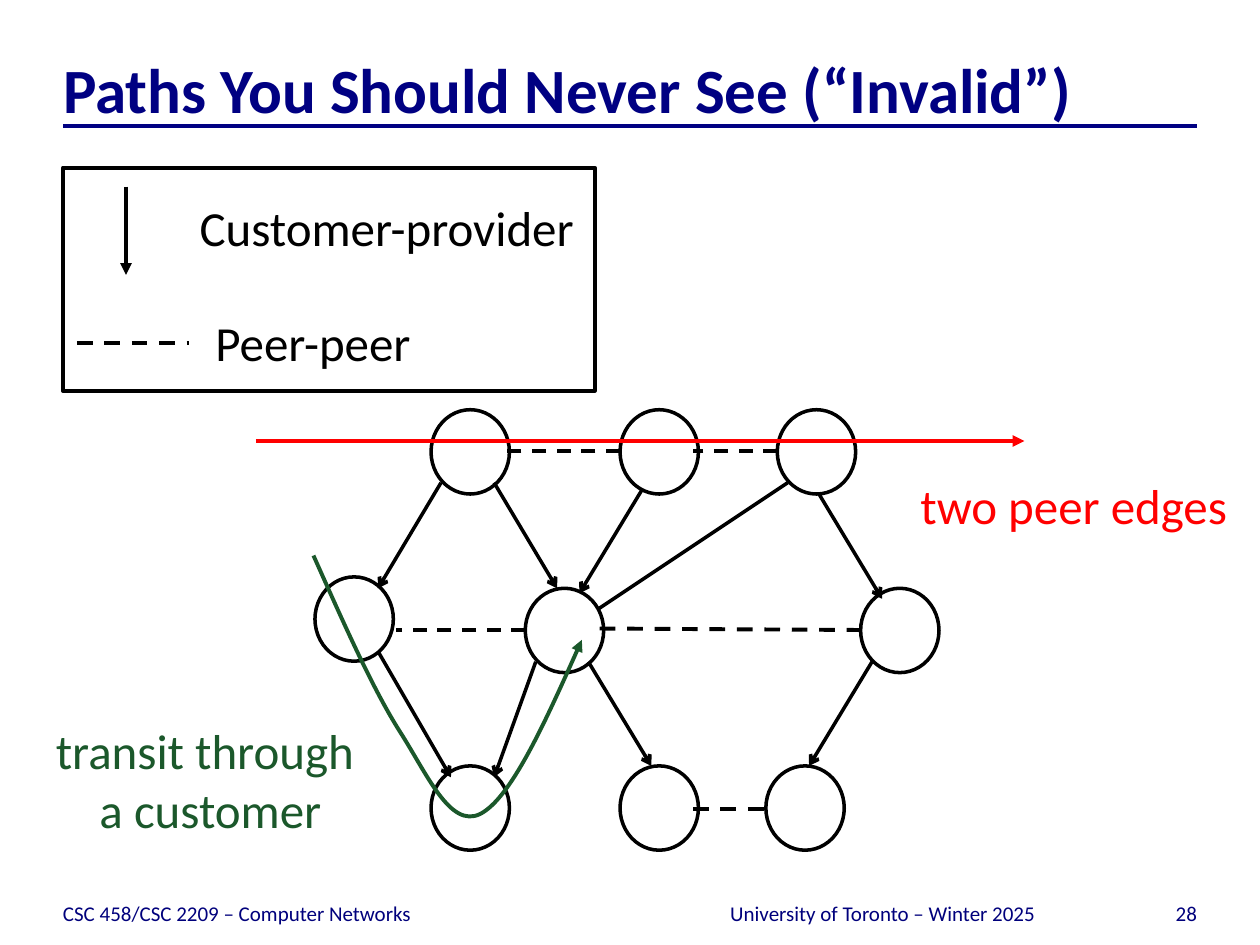
from pptx import Presentation
from pptx.dml.color import RGBColor
from pptx.enum.dml import MSO_LINE
from pptx.enum.shapes import MSO_CONNECTOR, MSO_SHAPE
from pptx.enum.text import MSO_ANCHOR, PP_ALIGN
from pptx.oxml.ns import qn
from pptx.util import Cm, Pt
from lxml.etree import SubElement

NAVY, FOOT, BLACK, RED, GREEN = "000082", "00007C", "000000", "FF0000", "1B582B"
color = RGBColor.from_string

deck = Presentation()
deck.slide_width, deck.slide_height = Cm(25.4), Cm(19.05)
slide = deck.slides.add_slide(deck.slide_layouts[5])
shapes = slide.shapes


def write(frame, lines, size, hue, align, bold=False):
    for i, line in enumerate(lines):
        para = frame.paragraphs[0] if i == 0 else frame.add_paragraph()
        para.alignment = align
        run = para.add_run()
        run.text = line
        font = run.font
        font.name, font.size, font.bold = "Calibri", Pt(size), bold
        font.color.rgb = color(hue)


def link(ends, hue=BLACK, width=2, dash=False, head=None):
    edge = shapes.add_connector(MSO_CONNECTOR.STRAIGHT, *[Cm(v) for v in ends])
    edge.line.color.rgb = color(hue)
    edge.line.width = Pt(width)
    if dash:
        edge.line.dash_style = MSO_LINE.DASH
    if head:
        SubElement(edge.line._get_or_add_ln(), qn("a:tailEnd"), type=head)
    SubElement(edge._element.spPr, qn("a:effectLst"))


# Title and its rule
title = shapes.title
title.left, title.top, title.width, title.height = Cm(1.27), Cm(0.84), Cm(22.86), Cm(1.7)
frame = title.text_frame
frame.margin_left = frame.margin_right = frame.margin_bottom = 0
frame.margin_top = Cm(0.13)
frame.vertical_anchor = MSO_ANCHOR.BOTTOM
write(frame, ["Paths You Should Never See (“Invalid”)"], 36, NAVY, PP_ALIGN.LEFT, True)
link((1.27, 2.54, 24.13, 2.54), NAVY, 2.25)

# Footer
for text, left, width, align in [
    ("CSC 458/CSC 2209 – Computer Networks", 1.27, 12.27, PP_ALIGN.LEFT),
    ("University of Toronto – Winter 2025", 13.77, 8.05, PP_ALIGN.CENTER),
    ("28", 22.02, 2.11, PP_ALIGN.RIGHT),
]:
    frame = shapes.add_textbox(Cm(left), Cm(17.65), Cm(width), Cm(1.02)).text_frame
    frame.margin_left = frame.margin_right = frame.margin_top = frame.margin_bottom = 0
    frame.word_wrap = True
    frame.vertical_anchor = MSO_ANCHOR.BOTTOM
    write(frame, [text], 12, FOOT, align)

# Network nodes and the legend frame
nodes = [(8.69, 8.26), (12.5, 8.26), (15.67, 8.26),
         (6.35, 11.63), (10.59, 11.86), (17.35, 11.86),
         (8.69, 15.44), (12.5, 15.44), (15.44, 15.44)]
outlines = [(MSO_SHAPE.OVAL, x, y, 1.58, 1.7, 2) for x, y in nodes]
outlines.append((MSO_SHAPE.RECTANGLE, 1.27, 3.38, 10.72, 4.5, 2.25))
for kind, x, y, w, h, weight in outlines:
    shape = shapes.add_shape(kind, Cm(x), Cm(y), Cm(w), Cm(h))
    shape.shadow.inherit = False
    shape.fill.background()
    shape.line.color.rgb = color(BLACK)
    shape.line.width = Pt(weight)

# Customer-provider edges
for ends in [
    (8.89, 9.73, 7.62, 11.86), (9.96, 9.73, 11.23, 11.86),
    (12.95, 9.86, 11.68, 11.96), (16.51, 9.96, 17.78, 12.07),
    (7.62, 13.13, 9.09, 15.67), (10.8, 13.34, 9.96, 15.67),
    (11.86, 13.34, 13.13, 15.44), (17.58, 13.34, 16.31, 15.44),
]:
    link(ends, head="arrow")
link((15.88, 9.73, 12.07, 12.27))

# Peer-peer edges
for ends, width in [
    ((12.5, 9.09, 10.16, 9.09), 2), ((15.67, 9.09, 13.97, 9.09), 2),
    ((10.59, 12.7, 7.98, 12.7), 2), ((12.09, 12.67, 17.35, 12.7), 2.25),
    ((13.97, 16.31, 15.44, 16.31), 2.25),
]:
    link(ends, width=width, dash=True)

# Legend samples and the invalid peer route
link((2.54, 3.76, 2.54, 5.54), width=2.25, head="triangle")
link((1.55, 6.91, 3.81, 6.91), width=2.25, dash=True)
link((5.16, 8.89, 20.65, 8.89), RED, 2.25, head="triangle")

# Invalid transit route: every three points form one Bezier segment
start, *rest = [(Cm(x), Cm(y)) for x, y in [
    (6.32, 11.2), (6.91, 12.52), (7.49, 13.84), (8.05, 14.73),
    (8.61, 15.6), (9.07, 16.71), (9.68, 16.41),
    (10.29, 16.1), (11.02, 14.5), (11.73, 12.9)]]
pen = shapes.build_freeform(*start)
pen.add_line_segments(rest, close=False)
route = pen.convert_to_shape()
steps = list(route._element.iter(qn("a:lnTo")))
for i in range(0, len(steps), 3):
    curve = SubElement(steps[i].getparent(), qn("a:cubicBezTo"))
    for step in steps[i:i + 3]:
        curve.append(step[0])
        step.getparent().remove(step)
route.shadow.inherit = False
route.fill.background()
route.line.color.rgb = color(GREEN)
route.line.width = Pt(2.25)
SubElement(route.line._get_or_add_ln(), qn("a:tailEnd"), type="triangle")

# Labels
for lines, x, y, w, h, hue in [
    (["Customer-provider"], 3.73, 3.86, 8.13, 1.45, BLACK),
    (["Peer-peer"], 4.06, 6.17, 4.5, 1.45, BLACK),
    (["two peer edges"], 18.29, 9.47, 6.71, 1.45, RED),
    (["transit through", " a customer"], 0.84, 14.4, 6.58, 2.62, GREEN),
]:
    frame = shapes.add_textbox(Cm(x), Cm(y), Cm(w), Cm(h)).text_frame
    frame.word_wrap = False
    write(frame, lines, 28, hue, PP_ALIGN.CENTER)

deck.save("out.pptx")
